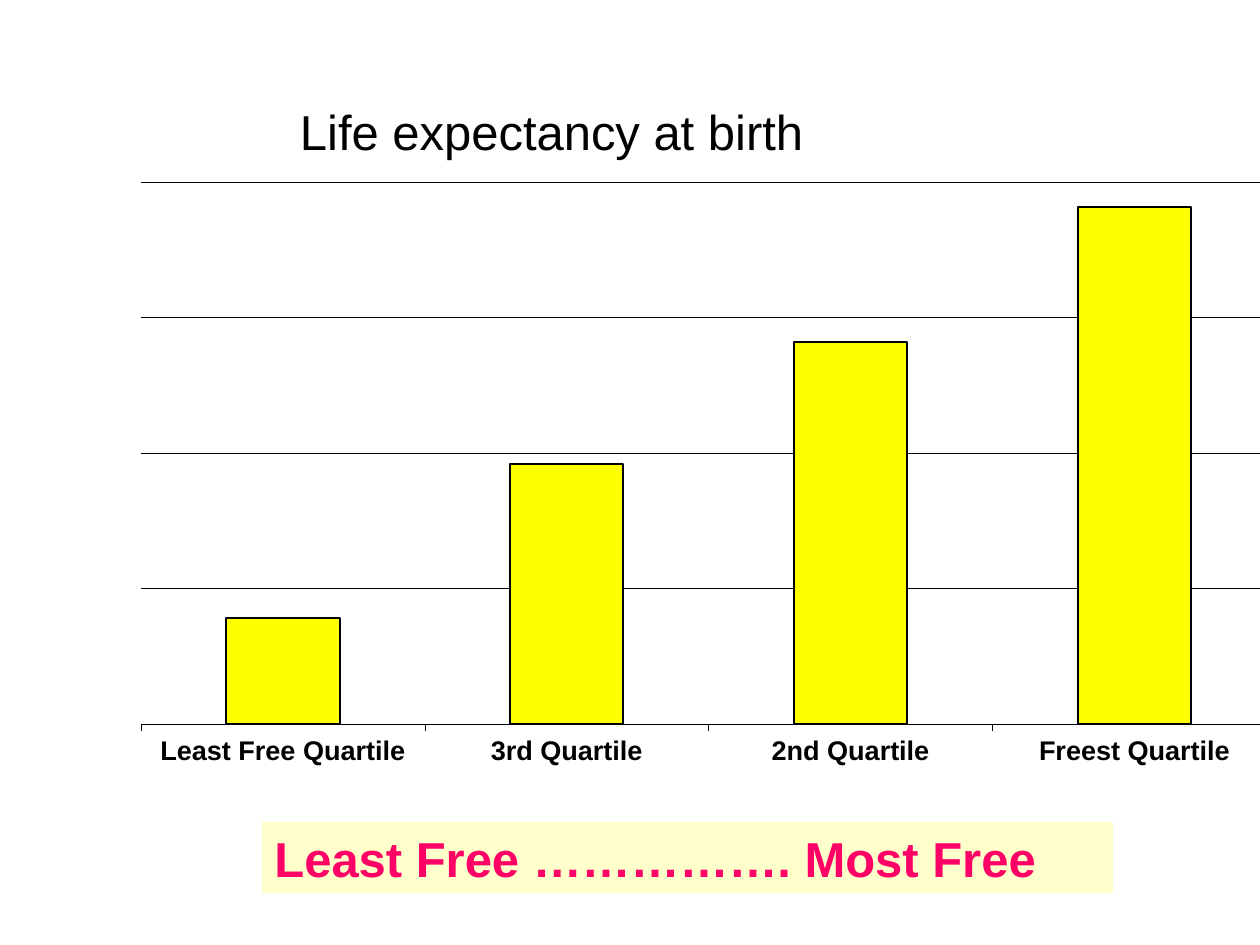
from dataclasses import dataclass

from lxml import etree
from pptx import Presentation
from pptx import util as u
from pptx.chart import data as chart_data
from pptx.dml.color import RGBColor
from pptx.enum import chart as charts, shapes, text
from pptx.oxml.ns import qn

TITLE = "Life expectancy at birth"
CAPTION = "Least Free ……………. Most Free"
LIFE_EXPECTANCY = [
    ("Freest Quartile", 81.1),
    ("2nd Quartile", 76.1),
    ("3rd Quartile", 71.6),
    ("Least Free Quartile", 65.9),
]
YEARS = {"minimum_scale": 62, "maximum_scale": 82, "major_unit": 5}

# left, top, width, height in px
SLIDE_SIZE = (1260, 945)
TITLE_BOX = (0, 63, 1103, 136)
CHART_BOX = (-55, 165, 1378, 721)
CAPTION_BOX = (262, 822, 851, 71)
PLOT_LAYOUT = {"x": 0.145, "y": 0, "w": 0.84, "h": 0.77}  # shares of the chart
EMU_PER_PX = 914400 / 126


@dataclass(frozen=True)
class Theme:
    font: str = "Arial"
    ink: str = "000000"
    bar: str = "FFFF00"
    caption_fill: str = "FFFFCC"
    caption_ink: str = "FF0066"
    heading_size: float = 28
    category_size: float = 15.8
    value_size: float = 18
    hairline: float = 0.28
    bar_line: float = 1.13


THEME = Theme()


def emu(lengths):
    return [u.Emu(round(length * EMU_PER_PX)) for length in lengths]


def style_font(font, size, color, bold):
    font.name = THEME.font
    font.size = u.Pt(size)
    font.bold = bold
    font.color.rgb = RGBColor.from_string(color)


def style_line(line, width):
    line.color.rgb = RGBColor.from_string(THEME.ink)
    line.width = u.Pt(width)


def fill_solid(fill, color):
    fill.solid()
    fill.fore_color.rgb = RGBColor.from_string(color)


def place_plot(chart):
    """Fix the inner plot area inside the chart frame."""
    plot_area = chart._chartSpace.find(".//" + qn("c:plotArea"))
    for old in plot_area.findall(qn("c:layout")):
        plot_area.remove(old)
    layout = etree.Element(qn("c:layout"))
    manual = etree.SubElement(layout, qn("c:manualLayout"))
    settings = {"layoutTarget": "inner", "xMode": "edge", "yMode": "edge", **PLOT_LAYOUT}
    for name, value in settings.items():
        etree.SubElement(manual, qn("c:" + name)).set("val", str(value))
    plot_area.insert(0, layout)


def add_title(page):
    title = page.shapes.title
    title.left, title.top, title.width, title.height = emu(TITLE_BOX)
    frame = title.text_frame
    frame.text = TITLE
    frame.vertical_anchor = text.MSO_ANCHOR.MIDDLE
    para = frame.paragraphs[0]
    para.alignment = text.PP_ALIGN.CENTER
    style_font(para.runs[0].font, THEME.heading_size, THEME.ink, False)


def add_life_chart(page):
    values = chart_data.CategoryChartData(number_format="0.0")
    values.categories = [name for name, _ in LIFE_EXPECTANCY]
    values.add_series("Series 1", [years for _, years in LIFE_EXPECTANCY])
    chart = page.shapes.add_chart(
        charts.XL_CHART_TYPE.COLUMN_CLUSTERED, *emu(CHART_BOX), values).chart
    chart.has_legend = False
    chart.has_title = False
    place_plot(chart)

    plot = chart.plots[0]
    plot.gap_width = 150
    plot.vary_by_categories = False
    bars = plot.series[0].format
    fill_solid(bars.fill, THEME.bar)
    style_line(bars.line, THEME.bar_line)

    categories, years = chart.category_axis, chart.value_axis
    for axis, size in ((categories, THEME.category_size), (years, THEME.value_size)):
        axis.major_tick_mark = charts.XL_TICK_MARK.OUTSIDE
        axis.minor_tick_mark = charts.XL_TICK_MARK.NONE
        style_font(axis.tick_labels.font, size, THEME.ink, True)
        style_line(axis.format.line, THEME.hairline)
    categories.reverse_order = True
    categories.tick_label_position = charts.XL_TICK_LABEL_POSITION.LOW
    for name, value in YEARS.items():
        setattr(years, name, value)
    years.tick_labels.number_format = "0"
    years.tick_labels.number_format_is_linked = False
    years.has_major_gridlines = True
    style_line(years.major_gridlines.format.line, THEME.hairline)


def add_caption(page):
    box = page.shapes.add_shape(shapes.MSO_SHAPE.RECTANGLE, *emu(CAPTION_BOX))
    box.shadow.inherit = False
    fill_solid(box.fill, THEME.caption_fill)
    box.line.fill.background()
    frame = box.text_frame
    frame.word_wrap = True
    frame.vertical_anchor = text.MSO_ANCHOR.TOP
    frame.text = CAPTION
    para = frame.paragraphs[0]
    para.alignment = text.PP_ALIGN.LEFT
    style_font(para.runs[0].font, THEME.heading_size, THEME.caption_ink, True)


def main():
    deck = Presentation()
    deck.slide_width, deck.slide_height = emu(SLIDE_SIZE)
    title_only = deck.slide_layouts[5]
    page = deck.slides.add_slide(title_only)
    add_title(page)
    add_life_chart(page)
    add_caption(page)
    deck.save("out.pptx")


if __name__ == "__main__":
    main()
